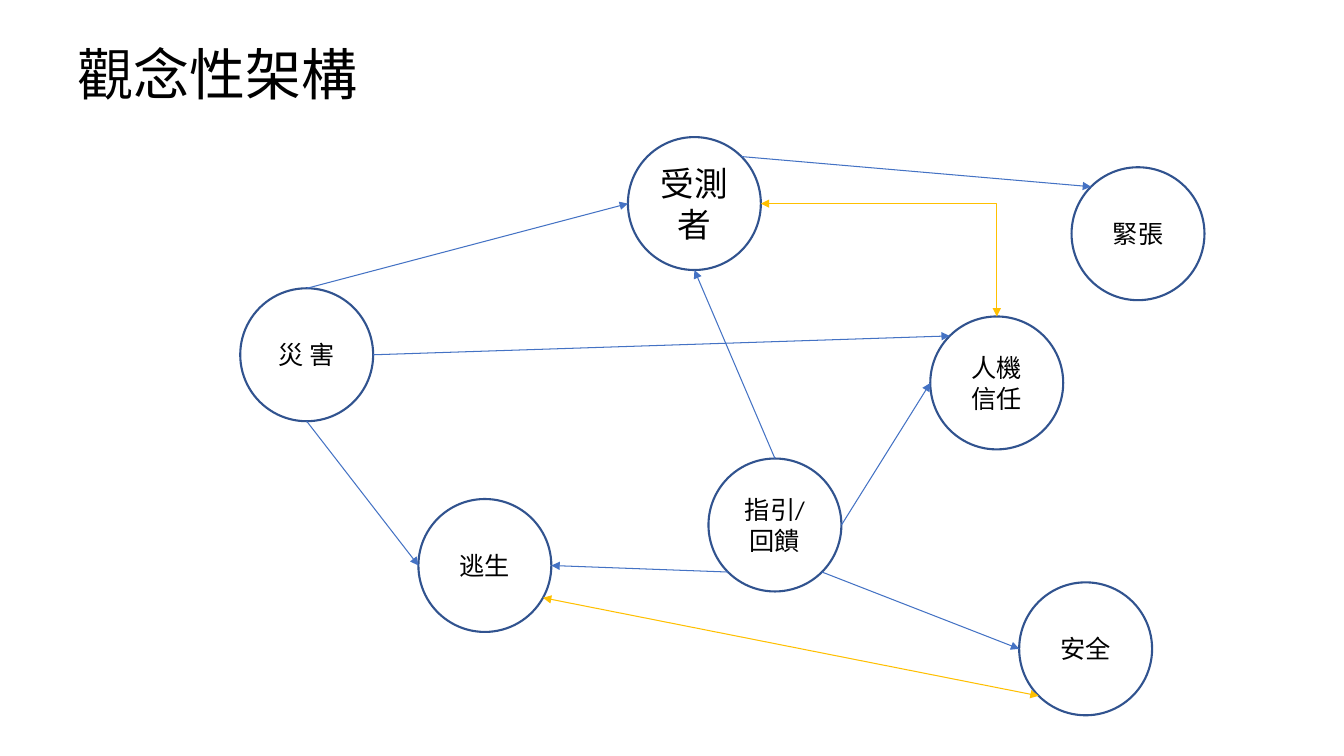
from dataclasses import dataclass
from math import cos, radians, sin

from lxml import etree
from pptx import Presentation
from pptx.dml.color import RGBColor
from pptx.enum import shapes, text
from pptx.oxml import ns
from pptx.util import Cm, Pt

COLORS = {"outline": "31538F", "effect": "4472C4", "mutual": "FFC000", "ink": "000000"}
FONT = "Calibri"
DIAMETER = 3.35

# Directions on a circle, in degrees clockwise from the right
RIGHT, LOWER_RIGHT, BOTTOM, LOWER_LEFT = 0, 45, 90, 135
LEFT, UPPER_LEFT, TOP, UPPER_RIGHT = 180, 225, 270, 315


@dataclass
class Concept:
    label: str
    x: float  # centre, cm
    y: float
    size: int = 18

    def rim(self, angle: float) -> tuple[Cm, Cm]:
        radius = DIAMETER / 2
        return (Cm(self.x + radius * cos(radians(angle))),
                Cm(self.y + radius * sin(radians(angle))))


@dataclass
class Relation:
    source: Concept
    source_angle: float
    target: Concept
    target_angle: float
    mutual: bool = False
    bent: bool = False


def write(frame, wording: str, size: int) -> None:
    frame.word_wrap = True
    frame.text = wording
    for paragraph in frame.paragraphs:
        paragraph.alignment = text.PP_ALIGN.CENTER
        paragraph.font.size = Pt(size)
        paragraph.font.name = FONT
        paragraph.font.color.rgb = RGBColor.from_string(COLORS["ink"])


def draw_concept(slide, concept: Concept) -> None:
    circle = slide.shapes.add_shape(
        shapes.MSO_SHAPE.OVAL,
        Cm(concept.x - DIAMETER / 2), Cm(concept.y - DIAMETER / 2),
        Cm(DIAMETER), Cm(DIAMETER))
    circle.shadow.inherit = False
    circle.fill.background()
    circle.line.color.rgb = RGBColor.from_string(COLORS["outline"])
    circle.line.width = Pt(1.5)
    circle.text_frame.vertical_anchor = text.MSO_ANCHOR.MIDDLE
    write(circle.text_frame, concept.label, concept.size)


def draw_relation(slide, relation: Relation) -> None:
    kind = shapes.MSO_CONNECTOR.ELBOW if relation.bent else shapes.MSO_CONNECTOR.STRAIGHT
    arrow = slide.shapes.add_connector(
        kind, *relation.source.rim(relation.source_angle),
        *relation.target.rim(relation.target_angle))
    arrow.line.color.rgb = RGBColor.from_string(
        COLORS["mutual" if relation.mutual else "effect"])
    arrow.line.width = Pt(0.75)

    # Arrowheads, single corner and no shadow
    properties = arrow._element.spPr
    if relation.bent:
        properties.find(ns.qn("a:prstGeom")).set("prst", "bentConnector2")
    outline = properties.find(ns.qn("a:ln"))
    for end in ("a:headEnd", "a:tailEnd") if relation.mutual else ("a:tailEnd",):
        etree.SubElement(outline, ns.qn(end), type="triangle")
    etree.SubElement(properties, ns.qn("a:effectLst"))


def main() -> None:
    deck = Presentation()
    deck.slide_width, deck.slide_height = Cm(33.87), Cm(19.05)
    slide = deck.slides.add_slide(deck.slide_layouts[6])

    # Title
    title = slide.shapes.add_textbox(Cm(1.55), Cm(0.15), Cm(7.87), Cm(2.69)).text_frame
    title.vertical_anchor = text.MSO_ANCHOR.BOTTOM
    write(title, "觀念性架構", 40)
    title.paragraphs[0].line_spacing = 0.9

    # Concepts
    subject = Concept("受測者", 17.5, 5.13, size=24)
    trust = Concept("人機信任", 25.12, 9.65)
    safety = Concept("安全", 27.36, 16.35)
    guidance = Concept("指引/\n回饋", 19.53, 13.23)
    disaster = Concept("災 害", 7.73, 8.94)
    escape = Concept("逃生", 12.22, 14.25)
    tension = Concept("緊張", 28.68, 5.89)
    for concept in (subject, trust, safety, guidance, disaster, escape, tension):
        draw_concept(slide, concept)

    # Relations
    relations = [
        Relation(subject, RIGHT, trust, TOP, mutual=True, bent=True),
        Relation(disaster, RIGHT, trust, UPPER_LEFT),
        Relation(disaster, TOP, subject, LEFT),
        Relation(disaster, BOTTOM, escape, LEFT),
        Relation(guidance, RIGHT, trust, LEFT),
        Relation(guidance, TOP, subject, BOTTOM),
        Relation(guidance, LOWER_LEFT, escape, RIGHT),
        Relation(guidance, LOWER_RIGHT, safety, LEFT),
        Relation(escape, 29, safety, LOWER_LEFT, mutual=True),
        Relation(subject, UPPER_RIGHT, tension, UPPER_LEFT),
    ]
    for relation in relations:
        draw_relation(slide, relation)

    deck.save("out.pptx")


if __name__ == "__main__":
    main()
